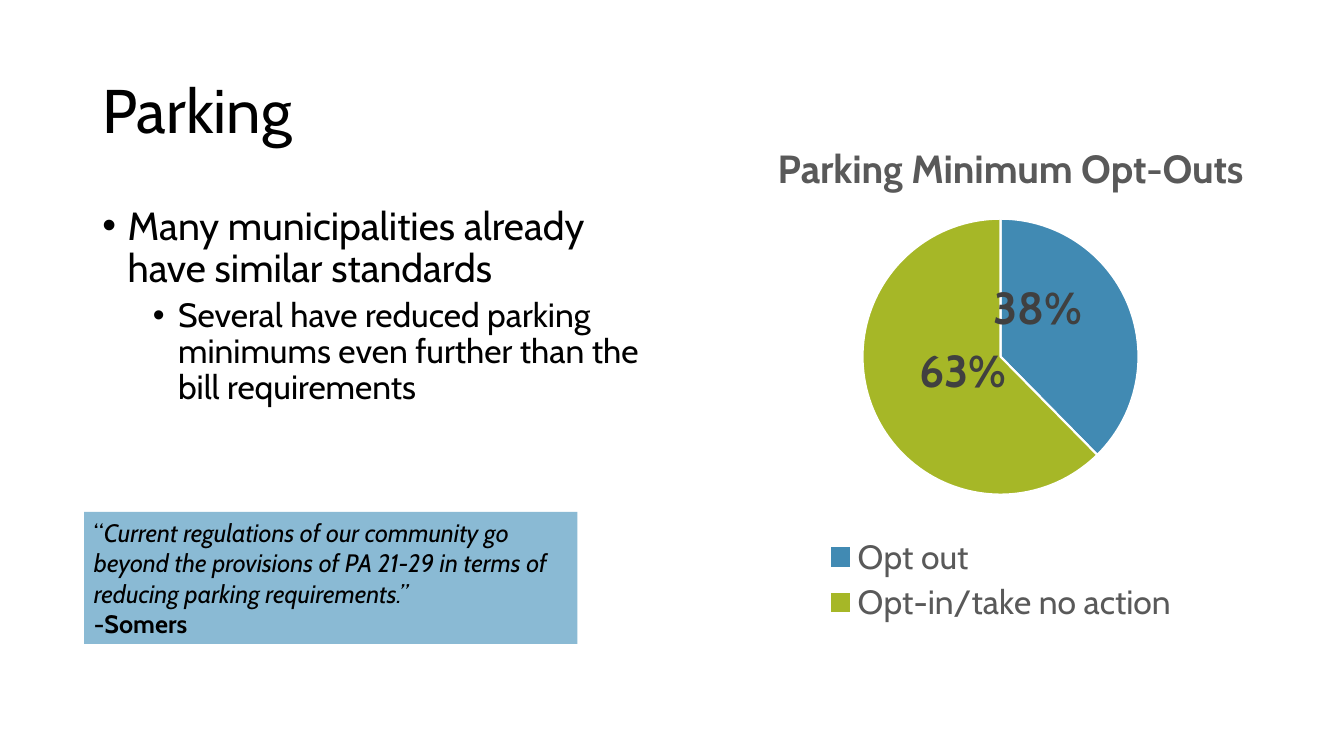
"""Build the parking slide with a bullet list, a quote and a pie chart."""
from dataclasses import dataclass

from pptx import Presentation
from pptx.chart import data
from pptx.dml.color import RGBColor
from pptx.enum import chart as charts, shapes, text
from pptx.oxml import ns, parse_xml
from pptx.util import Pt


@dataclass(frozen=True)
class Theme:
    font: str = "Cabin"
    black: str = "000000"
    white: str = "FFFFFF"
    grey: str = "595959"
    dark_grey: str = "404040"
    quote_fill: str = "8ABAD4"
    slices: tuple = ("418AB3", "A6B727")
    title_size: int = 44
    list_sizes: tuple = (28, 24)
    quote_size: int = 18
    chart_title_size: int = 28
    legend_size: int = 24
    label_size: int = 32


THEME = Theme()


def style_font(font, size, color, bold=False, italic=False):
    font.name = THEME.font
    font.size = Pt(size)
    font.color.rgb = RGBColor.from_string(color)
    font.bold = bold
    font.italic = italic


def place(shape, left, top, width, height):
    shape.left, shape.top = Pt(left), Pt(top)
    shape.width, shape.height = Pt(width), Pt(height)


def fill_title(title, wording):
    place(title, 66, 28.8, 828, 104.4)
    frame = title.text_frame
    frame.text = wording
    frame.auto_size = text.MSO_AUTO_SIZE.NONE
    frame.vertical_anchor = text.MSO_ANCHOR.MIDDLE
    paragraph = frame.paragraphs[0]
    paragraph.alignment = text.PP_ALIGN.LEFT
    paragraph.line_spacing = 0.9
    style_font(paragraph.runs[0].font, THEME.title_size, THEME.black)


def set_bullet(paragraph, left, hanging):
    properties = paragraph._p.get_or_add_pPr()
    properties.set("marL", str(Pt(left)))
    properties.set("indent", str(-Pt(hanging)))
    properties.append(parse_xml(f'<a:buFont {ns.nsdecls("a")} typeface="Arial"/>'))
    properties.append(parse_xml(f'<a:buChar {ns.nsdecls("a")} char="•"/>'))


def fill_list(body, items):
    place(body, 66, 144, 408, 342.6)
    frame = body.text_frame
    frame.text = "\n".join(items)
    frame.auto_size = text.MSO_AUTO_SIZE.NONE
    for level, paragraph in enumerate(frame.paragraphs):
        paragraph.level = level
        paragraph.line_spacing = 0.9
        paragraph.space_before = Pt(10 - 5 * level)
        set_bullet(paragraph, 18 + 36 * level, 18)
        style_font(paragraph.runs[0].font, THEME.list_sizes[level], THEME.black)


def add_quote(slide, quote, speaker):
    shape = slide.shapes.add_shape(
        shapes.MSO_SHAPE.RECTANGLE, Pt(60), Pt(365.7), Pt(352.5), Pt(94.3))
    shape.shadow.inherit = False
    shape.fill.solid()
    shape.fill.fore_color.rgb = RGBColor.from_string(THEME.quote_fill)
    shape.line.fill.background()
    frame = shape.text_frame
    frame.word_wrap = True
    frame.text = f"“\n{speaker}"
    opening, source = frame.paragraphs
    opening.add_run().text = quote
    for paragraph in frame.paragraphs:
        paragraph.alignment = text.PP_ALIGN.LEFT
    mark, words = opening.runs
    style_font(mark.font, THEME.quote_size, THEME.black)
    style_font(words.font, THEME.quote_size, THEME.black, italic=True)
    style_font(source.runs[0].font, THEME.quote_size, THEME.black, bold=True)


def set_layout(element, index, **values):
    """Place a chart part by fractions of the chart's size."""
    for old in element.findall(ns.qn("c:layout")):
        element.remove(old)
    modes = "".join(f'<c:{name}Mode val="edge"/>' for name in "xy" if "w" in values or "edge" in values)
    target = '<c:layoutTarget val="inner"/>' if index == 0 else ""
    numbers = "".join(f'<c:{name} val="{values[name]}"/>' for name in "xywh" if name in values)
    element.insert(index, parse_xml(
        f'<c:layout {ns.nsdecls("c")}><c:manualLayout>{target}{modes}{numbers}'
        "</c:manualLayout></c:layout>"))


def style_slices(chart):
    series = chart.plots[0].series[0]
    for index, color in enumerate(THEME.slices):
        point = series.points[index]
        point.format.fill.solid()
        point.format.fill.fore_color.rgb = RGBColor.from_string(color)
        point.format.line.color.rgb = RGBColor.from_string(THEME.white)
        point.format.line.width = Pt(1.5)
        label = point.data_label
        style_font(label.font, THEME.label_size, THEME.dark_grey, bold=True)
        label.position = charts.XL_LABEL_POSITION.CENTER
    offsets = ((-0.04, -0.04), (0.04, -0.02))
    for label, (x, y) in zip(chart.element.xpath(".//c:dLbl"), offsets):
        set_layout(label, 1, x=x, y=y)
        label.insert(2, parse_xml(
            f'<c:numFmt {ns.nsdecls("c")} formatCode="0%" sourceLinked="0"/>'))


def add_pie(slide, heading, shares):
    chart_data = data.CategoryChartData(number_format="0%")
    chart_data.categories = list(shares)
    chart_data.add_series("Series 1", list(shares.values()))
    chart = slide.shapes.add_chart(
        charts.XL_CHART_TYPE.PIE, Pt(480), Pt(72.7), Pt(469.4), Pt(379.4), chart_data).chart
    style_font(chart.font, 10, THEME.black)
    chart.plots[0].vary_by_categories = True
    chart.has_title = True
    title_frame = chart.chart_title.text_frame
    title_frame.text = heading
    style_font(title_frame.paragraphs[0].runs[0].font, THEME.chart_title_size, THEME.grey, bold=True)
    chart.has_legend = True
    chart.legend.position = charts.XL_LEGEND_POSITION.BOTTOM
    chart.legend.include_in_layout = False
    style_font(chart.legend.font, THEME.legend_size, THEME.grey)
    style_slices(chart)
    set_layout(chart.element.xpath(".//c:title")[0], 1, x=0.15, y=0.06, edge=True)
    set_layout(chart.element.xpath(".//c:plotArea")[0], 0, x=0.29, y=0.22, w=0.42, h=0.52)
    set_layout(chart.element.xpath(".//c:legend")[0], 1, x=0.23, y=0.81, w=0.54, h=0.18)


def main():
    presentation = Presentation()
    presentation.slide_width, presentation.slide_height = Pt(960), Pt(540)
    slide = presentation.slides.add_slide(presentation.slide_layouts[1])
    fill_title(slide.shapes.title, "Parking")
    fill_list(slide.placeholders[1], (
        "Many municipalities already have similar standards",
        "Several have reduced parking minimums even further than the bill requirements"))
    add_pie(slide, "Parking Minimum Opt-Outs",
            {"Opt out": 0.38, "Opt-in/take no action": 0.63})
    add_quote(slide, "Current regulations of our community go beyond the provisions of "
              "PA 21-29 in terms of reducing parking requirements.”", "-Somers")
    presentation.save("out.pptx")


if __name__ == "__main__":
    main()
